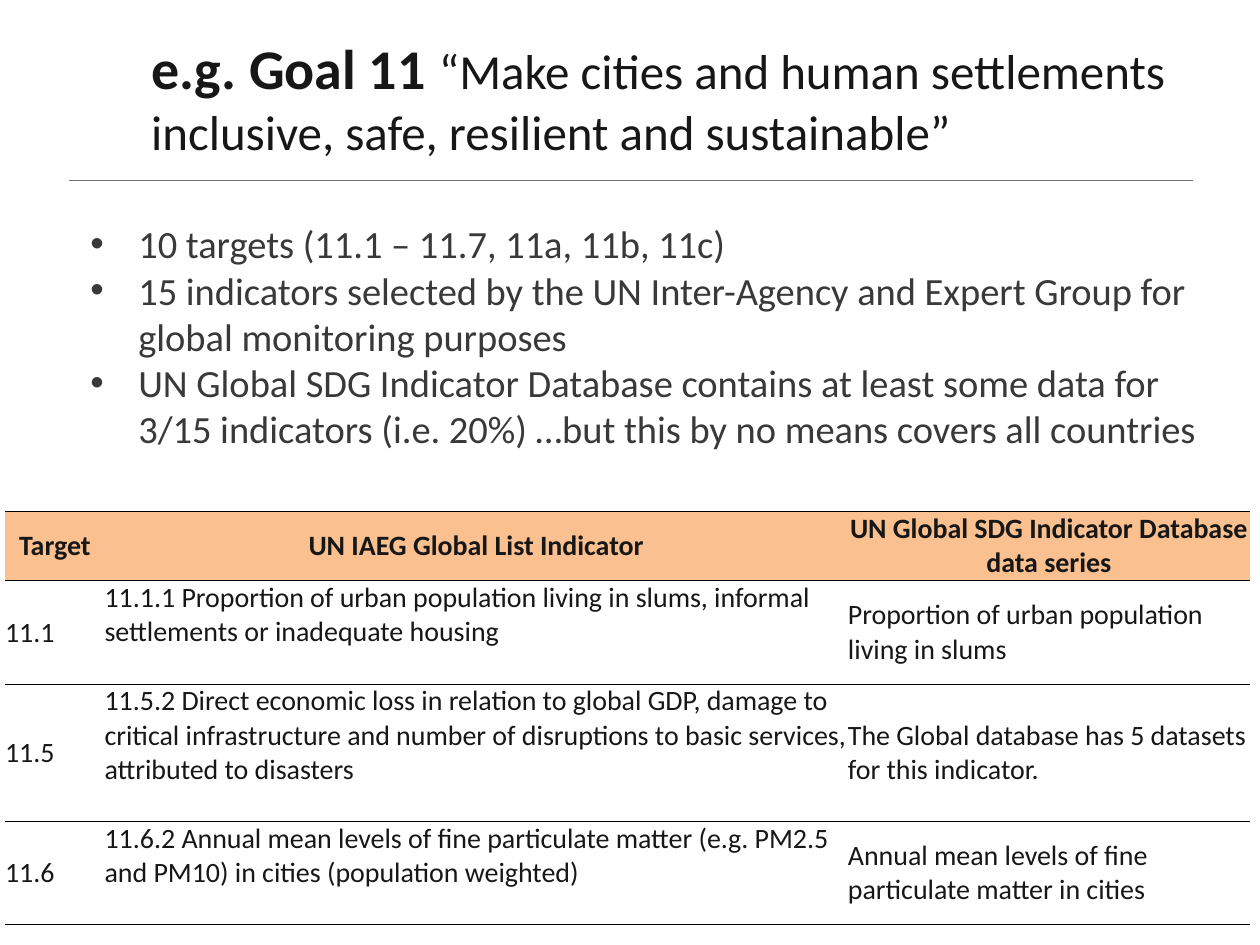
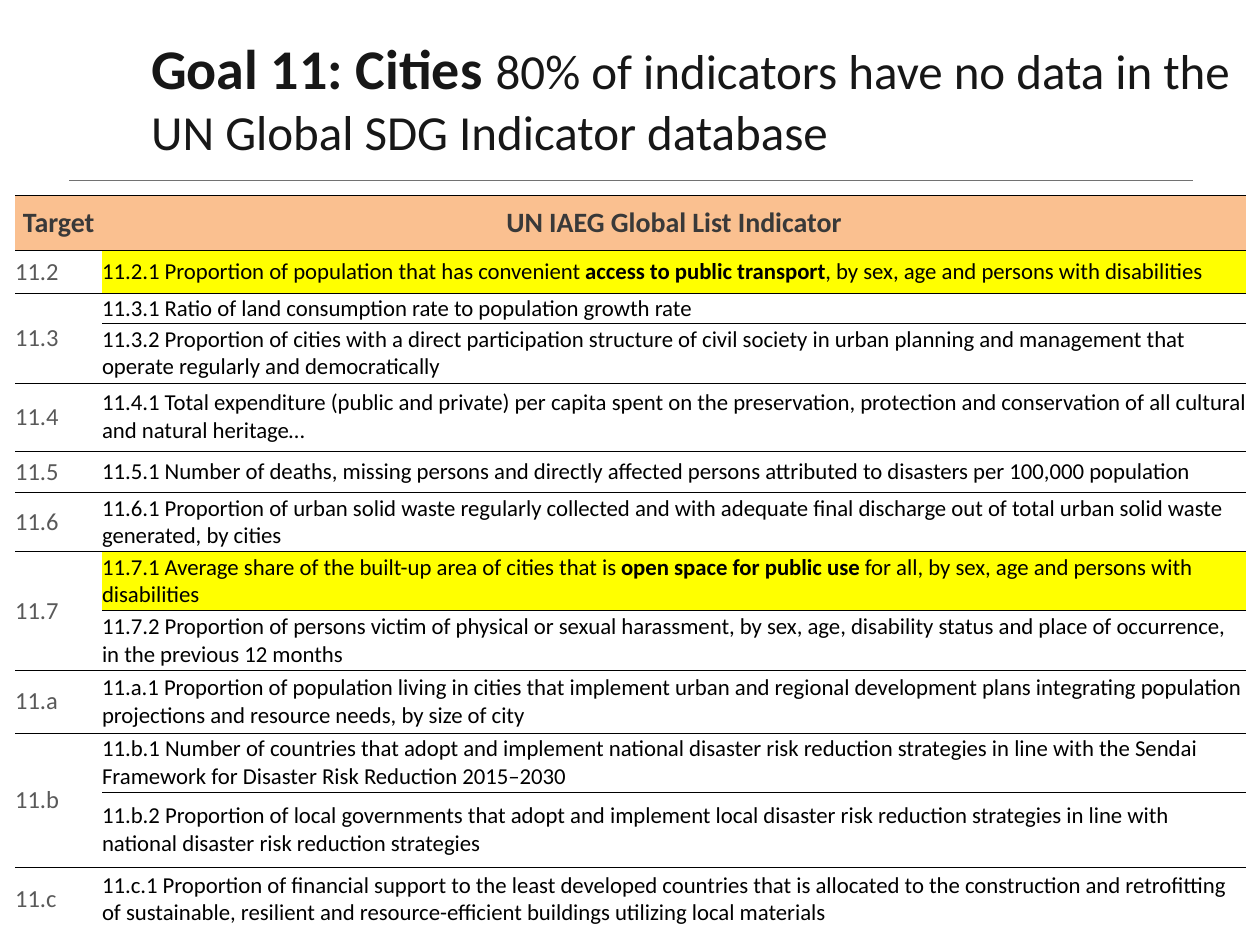
from lxml.etree import SubElement
from pptx import Presentation
from pptx.dml.color import RGBColor
from pptx.enum.shapes import MSO_CONNECTOR
from pptx.enum.text import MSO_ANCHOR, PP_ALIGN
from pptx.oxml.ns import qn
from pptx.util import Emu, Inches, Pt

FONT = "Calibri"
INK = RGBColor(0x17, 0x17, 0x17)
BODY_GREY = RGBColor(0x39, 0x39, 0x39)
TARGET_GREY = RGBColor(0x59, 0x59, 0x59)
RULE_GREY = RGBColor(0x72, 0x72, 0x72)
BLACK = RGBColor(0x00, 0x00, 0x00)
WHITE = RGBColor(0xFF, 0xFF, 0xFF)
PEACH = RGBColor(0xFA, 0xC0, 0x90)
YELLOW = RGBColor(0xFF, 0xFF, 0x00)

TITLES = [
    ("e.g. Goal 11 ", "“Make cities and human settlements inclusive, safe, resilient and sustainable”"),
    ("Goal 11: Cities ", "80% of indicators have no data in the UN Global SDG Indicator database"),
]

FINDINGS = [
    "10 targets (11.1 – 11.7, 11a, 11b, 11c)",
    "15 indicators selected by the UN Inter-Agency and Expert Group for global monitoring purposes",
    "UN Global SDG Indicator Database contains at least some data for 3/15 indicators (i.e. 20%) "
    "…but this by no means covers all countries",
]

# Each row: height in inches, then its cells
COVERED = [
    (0.55, "Target", "UN IAEG Global List Indicator", "UN Global SDG Indicator Database data series"),
    (0.82, "11.1",
     "11.1.1 Proportion of urban population living in slums, informal settlements or inadequate housing",
     "Proportion of urban population living in slums"),
    (1.09, "11.5",
     "11.5.2 Direct economic loss in relation to global GDP, damage to critical infrastructure and "
     "number of disruptions to basic services, attributed to disasters",
     "The Global database has 5 datasets for this indicator."),
    (0.82, "11.6",
     "11.6.2 Annual mean levels of fine particulate matter (e.g. PM2.5 and PM10) in cities "
     "(population weighted)",
     "Annual mean levels of fine particulate matter in cities"),
]

# An empty target continues the one above; asterisks enclose the bold words of a highlighted row
MISSING = [
    (0.44, "Target", "UN IAEG Global List Indicator"),
    (0.34, "11.2", "11.2.1 Proportion of population that has convenient *access to public transport*, "
                   "by sex, age and persons with disabilities"),
    (0.24, "11.3", "11.3.1 Ratio of land consumption rate to population growth rate"),
    (0.47, "", "11.3.2 Proportion of cities with a direct participation structure of civil society in "
               "urban planning and management that operate regularly and democratically"),
    (0.54, "11.4", "11.4.1 Total expenditure (public and private) per capita spent on the preservation, "
                   "protection and conservation of all cultural and natural heritage…"),
    (0.33, "11.5", "11.5.1 Number of deaths, missing persons and directly affected persons attributed "
                   "to disasters per 100,000 population"),
    (0.47, "11.6", "11.6.1 Proportion of urban solid waste regularly collected and with adequate final "
                   "discharge out of total urban solid waste generated, by cities"),
    (0.47, "11.7", "11.7.1 Average share of the built-up area of cities that is *open space for public "
                   "use *for all, by sex, age and persons with disabilities"),
    (0.47, "", "11.7.2 Proportion of persons victim of physical or sexual harassment, by sex, age, "
               "disability status and place of occurrence, in the previous 12 months"),
    (0.5, "11.a", "11.a.1 Proportion of population living in cities that implement urban and regional "
                  "development plans integrating population projections and resource needs, by size of city"),
    (0.47, "11.b", "11.b.1 Number of countries that adopt and implement national disaster risk reduction "
                   "strategies in line with the Sendai Framework for Disaster Risk Reduction 2015–2030"),
    (0.6, "", "11.b.2 Proportion of local governments that adopt and implement local disaster risk "
              "reduction strategies in line with national disaster risk reduction strategies"),
    (0.5, "11.c", "11.c.1 Proportion of financial support to the least developed countries that is "
                  "allocated to the construction and retrofitting of sustainable, resilient and "
                  "resource-efficient buildings utilizing local materials"),
]


def write_run(paragraph, text, size, color, bold=False):
    run = paragraph.add_run()
    run.text = text
    run.font.name = FONT
    run.font.size = Pt(size)
    run.font.bold = bold
    run.font.color.rgb = color


def add_indicator_table(slide, left, top, widths, rows, styles, closed):
    """Styles give (size, colour) for header, target and other cells; closed rules off the last row."""
    height = sum(row[0] for row in rows)
    table = slide.shapes.add_table(len(rows), len(widths), Inches(left), Inches(top),
                                   Inches(sum(widths)), Inches(height)).table
    table.horz_banding = False
    for column, width in zip(table.columns, widths):
        column.width = Inches(width)
    for r, (row_height, *texts) in enumerate(rows):
        table.rows[r].height = Inches(row_height)
        if not texts[0]:
            table.cell(r - 1, 0).merge(table.cell(r, 0))
    for r, (_, *texts) in enumerate(rows):
        for c, text in enumerate(texts):
            cell = table.cell(r, c)
            cell.margin_left = cell.margin_right = cell.margin_top = cell.margin_bottom = 0
            cell.vertical_anchor = MSO_ANCHOR.MIDDLE
            ruled_below = not cell.is_merge_origin and (closed or r < len(rows) - 1)
            borders = {"L": False, "R": False, "T": not cell.is_spanned, "B": ruled_below}
            for side, ruled in borders.items():
                border = SubElement(cell._tc.get_or_add_tcPr(), qn(f"a:ln{side}"), w=str(Pt(0.5)))
                if ruled:
                    SubElement(SubElement(border, qn("a:solidFill")), qn("a:srgbClr"), val=str(BLACK))
                else:
                    SubElement(border, qn("a:noFill"))
            cell.fill.solid()
            cell.fill.fore_color.rgb = PEACH if r == 0 else YELLOW if "*" in text else WHITE
            if cell.is_spanned:
                continue
            paragraph = cell.text_frame.paragraphs[0]
            paragraph.alignment = PP_ALIGN.CENTER if r == 0 else PP_ALIGN.LEFT
            size, color = styles[0 if r == 0 else min(c + 1, 2)]
            for part, words in enumerate(text.split("*")):
                write_run(paragraph, words, size, color, bold=r == 0 or part % 2 == 1)
    return table


prs = Presentation()
prs.slide_width, prs.slide_height = Inches(10), Inches(7.5)
title_only = prs.slide_layouts[5]

for goal, statement in TITLES:
    slide = prs.slides.add_slide(title_only)
    title = slide.shapes.title
    title.left, title.top, title.width, title.height = map(Inches, (1.1, 0.21, 8.9, 1.12))
    title.text_frame.vertical_anchor = MSO_ANCHOR.MIDDLE
    heading = title.text_frame.paragraphs[0]
    heading.alignment = PP_ALIGN.LEFT
    write_run(heading, goal, 32, INK, bold=True)
    write_run(heading, statement, 28, INK)

    rule = slide.shapes.add_connector(MSO_CONNECTOR.STRAIGHT, Inches(0.55), Inches(1.43),
                                      Inches(9.47), Inches(1.43))
    rule.line.color.rgb = RULE_GREY
    rule.line.width = Pt(0.5)
    SubElement(rule._element.spPr, qn("a:effectLst"))

covered_slide, missing_slide = prs.slides

covered = add_indicator_table(covered_slide, 0.04, 4.06, (0.79, 5.9, 3.19), COVERED,
                              [(16, INK)] * 3, closed=True)
for r in range(1, len(COVERED)):
    covered.cell(r, 1).vertical_anchor = MSO_ANCHOR.TOP

findings = covered_slide.shapes.add_textbox(Inches(0.12), Inches(1.7), Inches(9.76), Inches(2.3)).text_frame
findings.word_wrap = True
for i, finding in enumerate(FINDINGS):
    paragraph = findings.add_paragraph() if i else findings.paragraphs[0]
    properties = paragraph._p.get_or_add_pPr()
    properties.set("marL", str(Inches(0.88)))
    properties.set("indent", str(Emu(-Inches(0.38))))
    SubElement(properties, qn("a:buFont"), typeface="Arial")
    SubElement(properties, qn("a:buChar"), char="•")
    paragraph.level = 1
    write_run(paragraph, finding, 22, BODY_GREY)

add_indicator_table(missing_slide, 0.12, 1.55, (0.69, 9.08), MISSING,
                    [(16, BODY_GREY), (14, TARGET_GREY), (13, BLACK)], closed=False)

prs.save("out.pptx")
